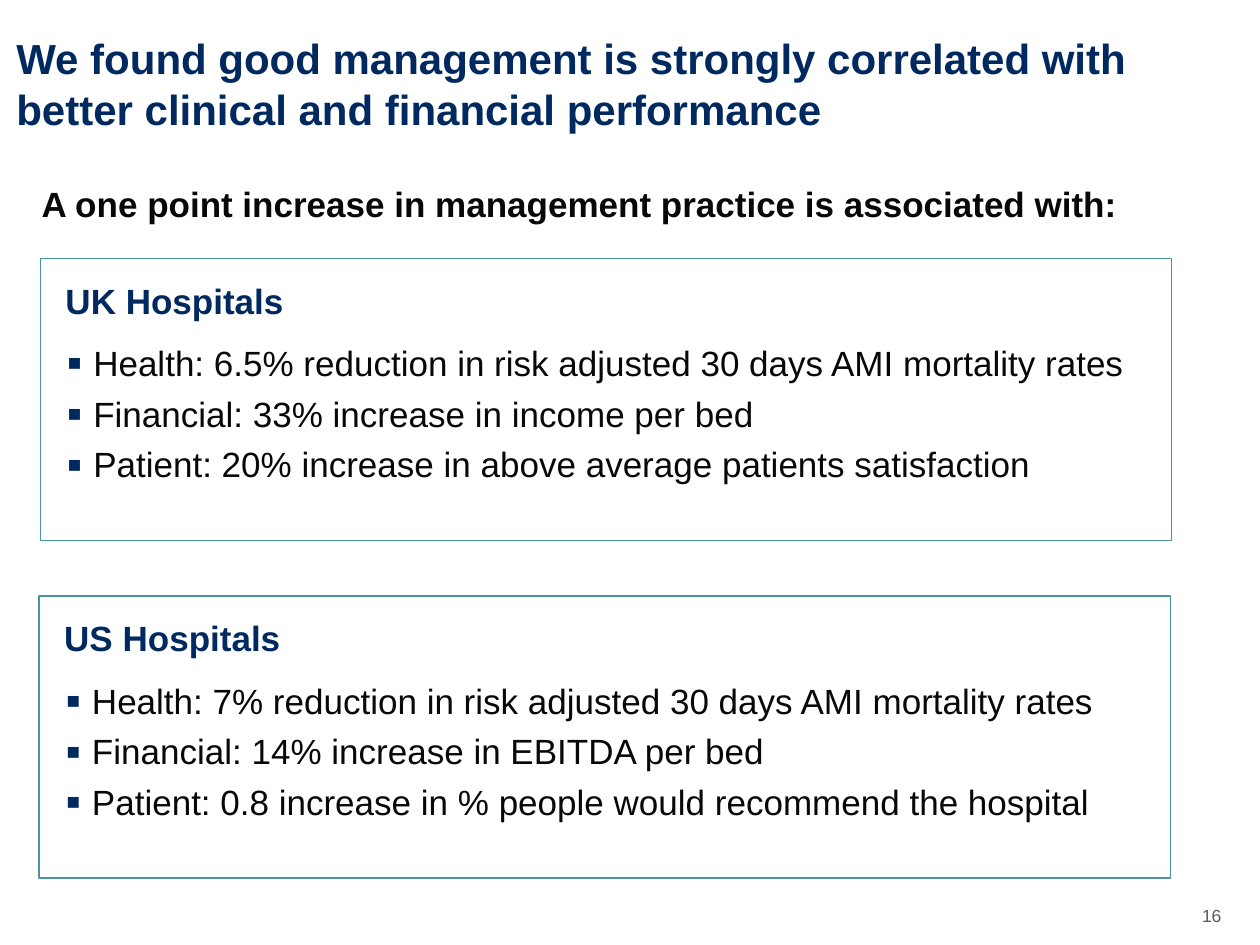
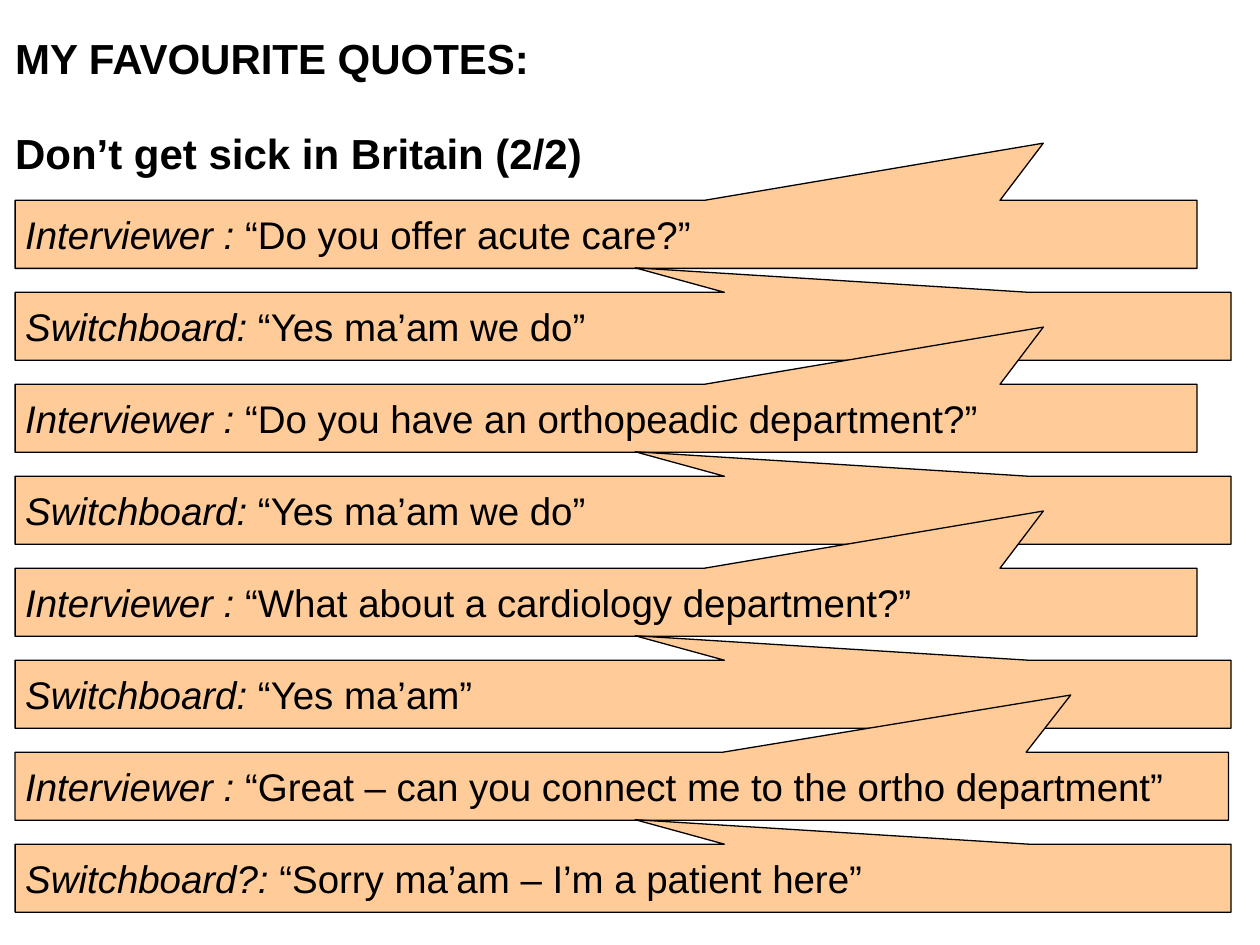
"""Build two slides: hospital management findings and a switchboard dialogue."""
from dataclasses import dataclass

from lxml import etree
from pptx import Presentation
from pptx import util as u
from pptx.dml.color import RGBColor
from pptx.enum import shapes, text
from pptx.oxml import ns


@dataclass(frozen=True)
class Theme:
    font: str = "Arial"
    navy: str = "002960"
    ink: str = "080808"
    black: str = "000000"
    grey: str = "59595A"
    teal: str = "48959E"
    peach: str = "FFCC99"
    title_size: int = 24
    quote_size: int = 22
    body_size: int = 20
    number_size: int = 10
    line_width: float = 0.75


COLUMNS, ROWS = 100, 75
theme = Theme()
presentation = Presentation()
presentation.slide_width, presentation.slide_height = u.Inches(10), u.Inches(7.5)
column = presentation.slide_width / COLUMNS
row = presentation.slide_height / ROWS


def place(shape, left, top, width, height, inset=0, anchor=text.MSO_ANCHOR.TOP):
    """Put a shape on the grid and set up its text frame."""
    shape.left, shape.width = round(left * column), round(width * column)
    shape.top, shape.height = round(top * row), round(height * row)
    frame = shape.text_frame
    frame.word_wrap = True
    frame.auto_size = text.MSO_AUTO_SIZE.NONE
    frame.vertical_anchor = anchor
    frame.margin_left = frame.margin_right = round(inset * column)
    frame.margin_top = frame.margin_bottom = round(inset * row)
    return frame


def style(paragraph, size, color, bold=False, align=text.PP_ALIGN.LEFT, after=0):
    """Format a whole paragraph."""
    paragraph.alignment = align
    paragraph.space_before, paragraph.space_after = u.Pt(0), u.Pt(after)
    font = paragraph.font
    font.name, font.size, font.bold = theme.font, u.Pt(size), bold
    font.color.rgb = RGBColor.from_string(color)


two_lists, title_only = presentation.slide_layouts[3], presentation.slide_layouts[5]

slide = presentation.slides.add_slide(two_lists)
frame = place(slide.shapes.title, 1.3, 2.6, 96.2, 8.2)
frame.text = ("We found good management is strongly correlated with "
              "better clinical and financial performance")
style(frame.paragraphs[0], theme.title_size, theme.navy, bold=True)

frame = place(slide.shapes.add_textbox(0, 0, 0, 0), 3.3, 14.5, 89.7, 3.4)
frame.text = "A one point increase in management practice is associated with:"
style(frame.paragraphs[0], theme.body_size, theme.ink, bold=True)

hospitals = [
    ("UK Hospitals", 3.2, [
        "Health: 6.5% reduction in risk adjusted 30 days AMI mortality rates",
        "Financial: 33% increase in income per bed",
        "Patient: 20% increase in above average patients satisfaction"]),
    ("US Hospitals", 3.1, [
        "Health: 7% reduction in risk adjusted 30 days AMI mortality rates",
        "Financial: 14% increase in EBITDA per bed",
        "Patient: 0.8 increase in % people would recommend the hospital"]),
]
for index, (heading, left, findings) in enumerate(hospitals):
    top = 20.5 + 26.8 * index
    box = slide.shapes.add_shape(shapes.MSO_SHAPE.RECTANGLE, 0, 0, 0, 0)
    place(box, left, top, 89.8, 22.4)
    box.shadow.inherit = False
    box.fill.background()
    box.line.color.rgb = RGBColor.from_string(theme.teal)
    box.line.width = u.Pt(theme.line_width)

    frame = place(slide.shapes.add_textbox(0, 0, 0, 0), left + 2, top + 1.65, 88.6, 3.4)
    frame.text = heading
    style(frame.paragraphs[0], theme.body_size, theme.navy, bold=True)

    frame = place(slide.placeholders[index + 1], left + 2, top + 6.6, 88.6, 11.6)
    frame.text = "\n".join(findings)
    for paragraph in frame.paragraphs:
        properties = paragraph._p.get_or_add_pPr()
        properties.set("marL", str(u.Inches(0.22)))
        properties.set("indent", str(u.Inches(-0.21)))
        style(paragraph, theme.body_size, theme.ink, after=5)
        defaults = properties.find(ns.qn("a:defRPr"))
        bullet_color = etree.Element(ns.qn("a:buClr"))
        etree.SubElement(bullet_color, ns.qn("a:srgbClr"), val=theme.navy)
        for element in (bullet_color,
                        etree.Element(ns.qn("a:buSzPct"), val="125000"),
                        etree.Element(ns.qn("a:buFont"), typeface=theme.font),
                        etree.Element(ns.qn("a:buChar"), char="▪")):
            defaults.addprevious(element)

frame = place(slide.shapes.add_textbox(0, 0, 0, 0), 95.4, 71.8, 2.2, 1.7)
frame.word_wrap = False
frame.text = "16"
style(frame.paragraphs[0], theme.number_size, theme.grey)

slide = presentation.slides.add_slide(title_only)
headings = [
    (slide.shapes.title, "MY FAVOURITE QUOTES:", 2.6),
    (slide.shapes.add_textbox(0, 0, 0, 0), "Don’t get sick in Britain (2/2)", 10.1),
]
for shape, heading, top in headings:
    frame = place(shape, 1.2, top, 73.3, 4.1)
    frame.text = heading
    style(frame.paragraphs[0], theme.title_size, theme.black, bold=True)

asking, answering = (0.37, -1.34), (0.01, -0.86)
quotes = [
    ("Interviewer :", "“Do you offer acute care?”", 93.8, asking),
    ("Switchboard:", "“Yes ma’am we do”", 96.5, answering),
    ("Interviewer :", "“Do you have an orthopeadic department?”", 93.8, asking),
    ("Switchboard:", "“Yes ma’am we do”", 96.5, answering),
    ("Interviewer :", "“What about a cardiology department?”", 93.8, asking),
    ("Switchboard:", "“Yes ma’am”", 96.5, answering),
    ("Interviewer :", "“Great – can you connect me to the ortho department”", 96.3, asking),
    ("Switchboard?:", "“Sorry ma’am – I’m a patient here”", 96.5, answering),
]
for index, (speaker, quote, width, tail) in enumerate(quotes):
    callout = slide.shapes.add_shape(shapes.MSO_SHAPE.RECTANGULAR_CALLOUT, 0, 0, 0, 0)
    frame = place(callout, 1.2, 15.9 + 7.3 * index, width, 5.4, 0.8, text.MSO_ANCHOR.MIDDLE)
    callout.adjustments[0], callout.adjustments[1] = tail
    callout.shadow.inherit = False
    callout.fill.solid()
    callout.fill.fore_color.rgb = RGBColor.from_string(theme.peach)
    callout.line.color.rgb = RGBColor.from_string(theme.black)
    callout.line.width = u.Pt(theme.line_width)
    paragraph = frame.paragraphs[0]
    style(paragraph, theme.quote_size, theme.black, align=text.PP_ALIGN.JUSTIFY)
    for words, italic in ((speaker, True), (f" {quote}", False)):
        run = paragraph.add_run()
        run.text, run.font.italic = words, italic

presentation.save("out.pptx")
